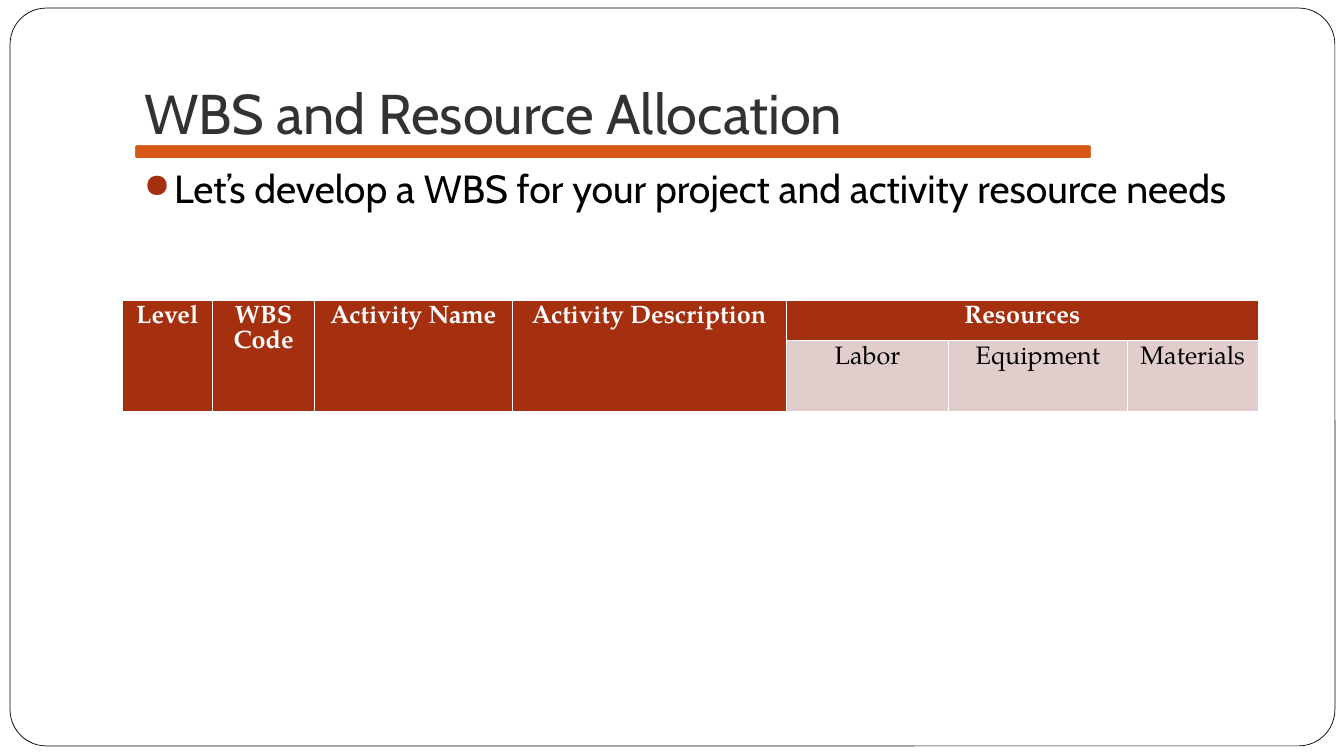
from dataclasses import dataclass

from lxml import etree
from pptx import Presentation
from pptx.dml.color import RGBColor
from pptx.enum import shapes, text
from pptx.oxml import ns
from pptx.util import Inches, Pt

BLACK = RGBColor(0x00, 0x00, 0x00)
WHITE = RGBColor(0xFF, 0xFF, 0xFF)
CHARCOAL = RGBColor(0x32, 0x32, 0x32)
ORANGE = RGBColor(0xD5, 0x58, 0x16)
RUST = RGBColor(0xA5, 0x30, 0x0F)
BLUSH = RGBColor(0xE1, 0xCD, 0xCC)

HEADING_FONT = "Cabin"
TABLE_FONT = "TeX Gyre Pagella"


@dataclass
class Panel:
    left: float
    top: float
    width: float
    height: float
    radius: float
    fill: RGBColor
    line: RGBColor
    line_width: float


@dataclass
class HeaderCell:
    row: int
    column: int
    words: str
    row_span: int = 1
    column_span: int = 1


PANELS = [
    Panel(0.1, 0.08, 13.14, 7.32, 0.049, WHITE, BLACK, 0.5),
    Panel(1.33, 1.43, 9.5, 0.15, 0.167, ORANGE, WHITE, 1.5),
]
COLUMN_WIDTHS = [0.9, 1.01, 1.96, 2.72, 1.61, 1.77, 1.3]
ROW_HEIGHTS = [0.34, 0.58]
ACTIVITY_HEADINGS = ["Level", "WBS Code", "Activity Name", "Activity Description"]
RESOURCES = ["Labor", "Equipment", "Materials"]


def apply_format(target, values: dict) -> None:
    for name, value in values.items():
        setattr(target, name, value)


def write(paragraph, words: str, color: RGBColor, **font_values) -> None:
    run = paragraph.add_run()
    run.text = words
    apply_format(run.font, font_values)
    run.font.color.rgb = color


def add_panel(slide, panel: Panel) -> None:
    shape = slide.shapes.add_shape(
        shapes.MSO_SHAPE.ROUNDED_RECTANGLE,
        Inches(panel.left), Inches(panel.top), Inches(panel.width), Inches(panel.height))
    shape.adjustments[0] = panel.radius
    shape.shadow.inherit = False
    shape.fill.solid()
    shape.fill.fore_color.rgb = panel.fill
    shape.line.color.rgb = panel.line
    shape.line.width = Pt(panel.line_width)


def add_bullet(paragraph, color: RGBColor) -> None:
    properties = paragraph._p.get_or_add_pPr()
    properties.set("marL", str(Inches(0.3)))
    properties.set("indent", str(Inches(-0.3)))
    bullet_color = etree.SubElement(properties, ns.qn("a:buClr"))
    etree.SubElement(bullet_color, ns.qn("a:srgbClr"), val=str(color))
    etree.SubElement(properties, ns.qn("a:buSzPct"), val="85000")
    etree.SubElement(properties, ns.qn("a:buChar"), char="●")


def fill_title(slide) -> None:
    title = slide.shapes.title
    apply_format(title, {"left": Inches(1.33), "top": Inches(0.3),
                         "width": Inches(11.33), "height": Inches(1.25)})
    frame = title.text_frame
    apply_format(frame, {"vertical_anchor": text.MSO_ANCHOR.BOTTOM, "word_wrap": True,
                         "auto_size": text.MSO_AUTO_SIZE.NONE,
                         "margin_bottom": Inches(0.1)})
    paragraph = frame.paragraphs[0]
    paragraph.alignment = text.PP_ALIGN.LEFT
    write(paragraph, "WBS and Resource Allocation", CHARCOAL,
          name=HEADING_FONT, size=Pt(40))


def add_body(slide) -> None:
    body = slide.shapes.add_textbox(Inches(1.33), Inches(1.58), Inches(12), Inches(5.73))
    body.text_frame.word_wrap = True
    paragraph = body.text_frame.paragraphs[0]
    paragraph.space_before = Pt(5.8)
    add_bullet(paragraph, RUST)
    write(paragraph, "Let’s develop a WBS for your project and activity resource needs",
          BLACK, name=HEADING_FONT, size=Pt(28))


def fill_cell(table, header: HeaderCell) -> None:
    cell = table.cell(header.row, header.column)
    if header.row_span > 1 or header.column_span > 1:
        cell.merge(table.cell(header.row + header.row_span - 1,
                              header.column + header.column_span - 1))
    is_heading = header.row == 0
    paragraph = cell.text_frame.paragraphs[0]
    paragraph.alignment = text.PP_ALIGN.CENTER
    write(paragraph, header.words, WHITE if is_heading else BLACK,
          name=TABLE_FONT, size=Pt(18), bold=is_heading)


def add_resource_table(slide) -> None:
    table = slide.shapes.add_table(
        len(ROW_HEIGHTS), len(COLUMN_WIDTHS), Inches(1.21), Inches(2.98),
        Inches(sum(COLUMN_WIDTHS)), Inches(sum(ROW_HEIGHTS))).table
    for column, width in zip(table.columns, COLUMN_WIDTHS):
        column.width = Inches(width)
    first_resource = len(ACTIVITY_HEADINGS)
    for row_index, height in enumerate(ROW_HEIGHTS):
        table.rows[row_index].height = Inches(height)
        for column_index in range(len(COLUMN_WIDTHS)):
            is_resource = row_index == 1 and column_index >= first_resource
            fill = table.cell(row_index, column_index).fill
            fill.solid()
            fill.fore_color.rgb = BLUSH if is_resource else RUST

    headers = [HeaderCell(0, i, words, row_span=2)
               for i, words in enumerate(ACTIVITY_HEADINGS)]
    headers.append(HeaderCell(0, first_resource, "Resources", column_span=len(RESOURCES)))
    headers += [HeaderCell(1, i, words) for i, words in enumerate(RESOURCES, first_resource)]
    for header in headers:
        fill_cell(table, header)


def main() -> None:
    presentation = Presentation()
    presentation.slide_width = Inches(13.33)
    presentation.slide_height = Inches(7.5)
    slide = presentation.slides.add_slide(presentation.slide_layouts.get_by_name("Title Only"))

    # Frame and title rule, kept behind the title
    for panel in PANELS:
        add_panel(slide, panel)
    title_element = slide.shapes.title._element
    title_element.getparent().append(title_element)

    # Title, bullet and table
    fill_title(slide)
    add_body(slide)
    add_resource_table(slide)
    presentation.save("out.pptx")


if __name__ == "__main__":
    main()
